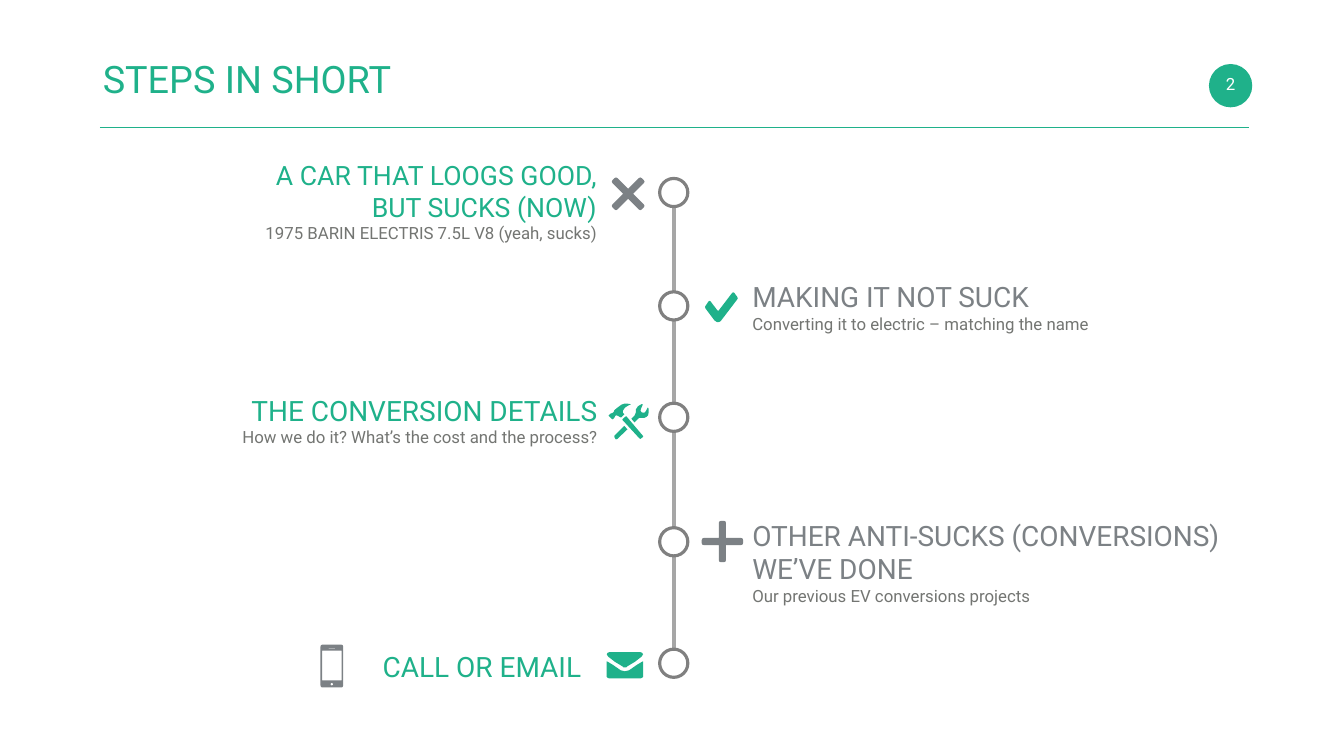
from math import cos, pi, sin

from lxml import etree
from pptx import Presentation
from pptx.dml.color import RGBColor
from pptx.enum.shapes import MSO_CONNECTOR, MSO_SHAPE
from pptx.enum.text import MSO_ANCHOR, MSO_AUTO_SIZE, PP_ALIGN
from pptx.oxml.ns import qn
from pptx.util import Inches, Pt

LEFT, RIGHT, MID = PP_ALIGN.LEFT, PP_ALIGN.RIGHT, PP_ALIGN.CENTER
TOP, CENTER = MSO_ANCHOR.TOP, MSO_ANCHOR.MIDDLE
GROW, FIXED = MSO_AUTO_SIZE.SHAPE_TO_FIT_TEXT, MSO_AUTO_SIZE.NONE
OVAL, LINE = MSO_SHAPE.OVAL, MSO_CONNECTOR.STRAIGHT

THEME = {
    "font": "Roboto", "green": "1FB18A", "gray": "7C8185", "body": "737572",
    "ring": "808080", "rail": "A6A6A6", "white": "FFFFFF",
    "title": 54, "head": 40, "tight": 38, "small": 24,
}

# Content: box, side, colour, heading size, headings, detail
STEPS = [
    ((4.43, 3.1, 7.51, 1.85), RIGHT, "green", "tight",
     ["A CAR THAT LOOGS GOOD,", "BUT SUCKS (NOW)"],
     "1975 BARIN ELECTRIS 7.5L V8 (yeah, sucks)"),
    ((14.83, 5.5, 7.5, 1.18), LEFT, "gray", "head",
     ["MAKING IT NOT SUCK"],
     "Converting it to electric – matching the name"),
    ((2.95, 7.76, 9, 1.18), RIGHT, "green", "head",
     ["THE CONVERSION DETAILS"],
     "How we do it? What’s the cost and the process?"),
    ((14.83, 10.23, 10.27, 1.85), LEFT, "gray", "head",
     ["OTHER ANTI-SUCKS (CONVERSIONS) WE’VE DONE"],
     "Our previous EV conversions projects"),
    ((7.02, 12.83, 4.61, 0.77), RIGHT, "green", "head",
     ["CALL OR EMAIL"], None),
]
NODES = [3.54, 5.79, 8, 10.47, 12.88]
NODE_X, NODE = 13.09, 0.56


# Icon outlines, in hundredths of an inch from the icon's corner
def ring(x, y, rad, count=16):
    turns = [2 * pi * i / count for i in range(count)]
    return [(x + rad * cos(t), y + rad * sin(t)) for t in turns]


def cross():
    arm = [(10, 0), (31, 21), (32.5, 24), (31, 27), (27, 31), (24, 32.5), (21, 31)]
    pts = []
    for _ in range(4):
        pts += arm
        arm = [(-y, x) for x, y in arm]
    return [[(x + 32.5, y + 32.5) for x, y in pts]]


CHECK = [[(24, 59), (22, 58), (19, 56), (1, 32), (0, 29), (1, 27), (7, 18),
          (9, 17), (11, 18), (24, 35), (26, 37), (28, 35), (54, 1), (56, 0),
          (58, 1), (64, 9), (65, 12), (64, 14), (32, 56), (30, 58), (27, 59)]]
PHONE = [
    [(4, 0), (41, 0), (44, 1), (45, 4), (45, 81), (44, 84), (41, 85),
     (4, 85), (1, 84), (0, 81), (0, 4), (1, 1)],
    [(16, 6.5), (29, 6.5), (29, 7.5), (16, 7.5)],
    [(3, 12), (42, 12), (42, 71), (3, 71)],
    ring(22.5, 78.5, 2.5),
]
MAIL = [
    [(36, 38), (40, 37), (44, 36), (50, 32), (60, 25), (70, 19), (72, 18),
     (72, 49), (70, 51), (67, 52), (5, 52), (2, 51), (0, 49), (0, 18), (2, 19),
     (12, 25), (22, 32), (28, 36), (32, 37)],
    [(36, 30), (33, 30), (31, 28), (26, 25), (16, 19), (7, 12), (3, 9), (1, 6),
     (0, 4), (2, 1), (5, 0), (67, 0), (70, 1), (72, 4), (71, 6), (69, 9),
     (65, 12), (56, 19), (46, 25), (41, 28), (39, 30)],
]
TOOLS = [
    # Hammer head, hammer handle, wrench head, wrench handle
    [(13, 24), (15, 23), (18, 24), (23, 27), (25, 27), (31, 21), (28, 18),
     (28, 14), (32, 8), (38, 4), (44, 1), (38, 0), (31, 0), (25, 2), (17, 8),
     (11, 13), (10, 16), (8, 18), (3, 20), (0, 23), (0, 24), (6, 30), (8, 31),
     (11, 28)],
    [(35, 25), (34, 25), (28, 30), (27, 32), (61, 69), (63, 70), (64, 69),
     (68, 66), (68, 64)],
    [(79, 10), (78, 8), (77, 8), (74, 14), (72, 17), (69, 18), (65, 17),
     (63, 14), (64, 10), (67, 3), (67, 1), (65, 1), (58, 5), (54, 11), (54, 17),
     (51, 24), (45, 30), (51, 37), (58, 30), (61, 28), (65, 28), (71, 28),
     (75, 26), (78, 23), (79, 18)],
    [(11, 64), (11, 66), (14, 71), (17, 70), (37, 51), (31, 44)],
]
# Icon: left, top, colour, outlines, turn
ICONS = [
    (12.14, 3.52, "gray", cross(), 0),
    (13.99, 5.8, "green", CHECK, 0),
    (12.08, 8.01, "green", TOOLS, 0),
    (14.01, 10.42, "gray", cross(), 45),
    (12.04, 12.94, "green", MAIL, 0),
    (6.36, 12.79, "gray", PHONE, 0),
]


def color(name):
    return RGBColor.from_string(THEME[name])


def write(shape, paras, align=LEFT, anchor=TOP, fit=GROW, pad=(0.1, 0.05)):
    """Fill a shape with (text, size name, colour name) paragraphs."""
    frame = shape.text_frame
    frame.word_wrap, frame.auto_size = True, fit
    frame.vertical_anchor = anchor
    frame.margin_left = frame.margin_right = Inches(pad[0])
    frame.margin_top = frame.margin_bottom = Inches(pad[1])
    for i, (text, size, tint) in enumerate(paras):
        para = frame.add_paragraph() if i else frame.paragraphs[0]
        para.alignment = align
        run = para.add_run()
        run.text = text
        run.font.name, run.font.size = THEME["font"], Pt(THEME[size])
        run.font.color.rgb = color(tint)


def label(shapes, box, paras, **form):
    write(shapes.add_textbox(*map(Inches, box)), paras, **form)


def paint(shape, fill, edge=None, width=4.5):
    shape.shadow.inherit = False
    shape.fill.solid()
    shape.fill.fore_color.rgb = color(fill)
    if edge:
        shape.line.color.rgb = color(edge)
        shape.line.width = Pt(width)
    else:
        shape.line.fill.background()


def rule(shapes, ends, tint, width):
    line = shapes.add_connector(LINE, *map(Inches, ends))
    line.line.color.rgb = color(tint)
    line.line.width = Pt(width)
    etree.SubElement(line._element.spPr, qn("a:effectLst"))


def icon(shapes, left, top, tint, loops, turn):
    # Units are thousandths of an inch
    loops = [[((left * 100 + x) * 10, (top * 100 + y) * 10) for x, y in loop]
             for loop in loops]
    pen = shapes.build_freeform(*loops[0][0], scale=914.4)
    for i, loop in enumerate(loops):
        if i:
            pen.move_to(*loop[0])
        pen.add_line_segments(loop[1:], close=True)
    shape = pen.convert_to_shape()
    shape.rotation = turn
    paint(shape, tint)


def main():
    deck = Presentation()
    deck.slide_width, deck.slide_height = Inches(26.67), Inches(15)
    slide = deck.slides.add_slide(deck.slide_layouts[5])
    shapes = slide.shapes

    # Header
    title = shapes.title
    title.left, title.top, title.width, title.height = map(
        Inches, (1.94, 1.06, 21.1, 1.01))
    write(title, [("STEPS IN SHORT", "title", "green")])
    paint(shapes.add_shape(OVAL, *map(Inches, (23.99, 1.27, 0.86, 0.86))), "green")
    label(shapes, (23.91, 1.3, 1.02, 0.73), [("2", "small", "white")],
          align=MID, anchor=CENTER, fit=FIXED, pad=(0.24, 0.12))
    rule(shapes, (1.98, 2.53, 24.79, 2.53), "green", 2.25)

    # Timeline
    axis = NODE_X + NODE / 2
    rule(shapes, (axis, NODES[0] + NODE, axis, 13.3), "rail", 6)
    for top in NODES:
        dot = shapes.add_shape(OVAL, *map(Inches, (NODE_X, top, NODE, NODE)))
        paint(dot, "white", "ring")

    # Steps
    for box, side, tint, size, heads, detail in STEPS:
        paras = [(head, size, tint) for head in heads]
        if detail:
            paras.append((detail, "small", "body"))
        label(shapes, box, paras, align=side)

    # Icons
    for spec in ICONS:
        icon(shapes, *spec)

    deck.save("out.pptx")


if __name__ == "__main__":
    main()
